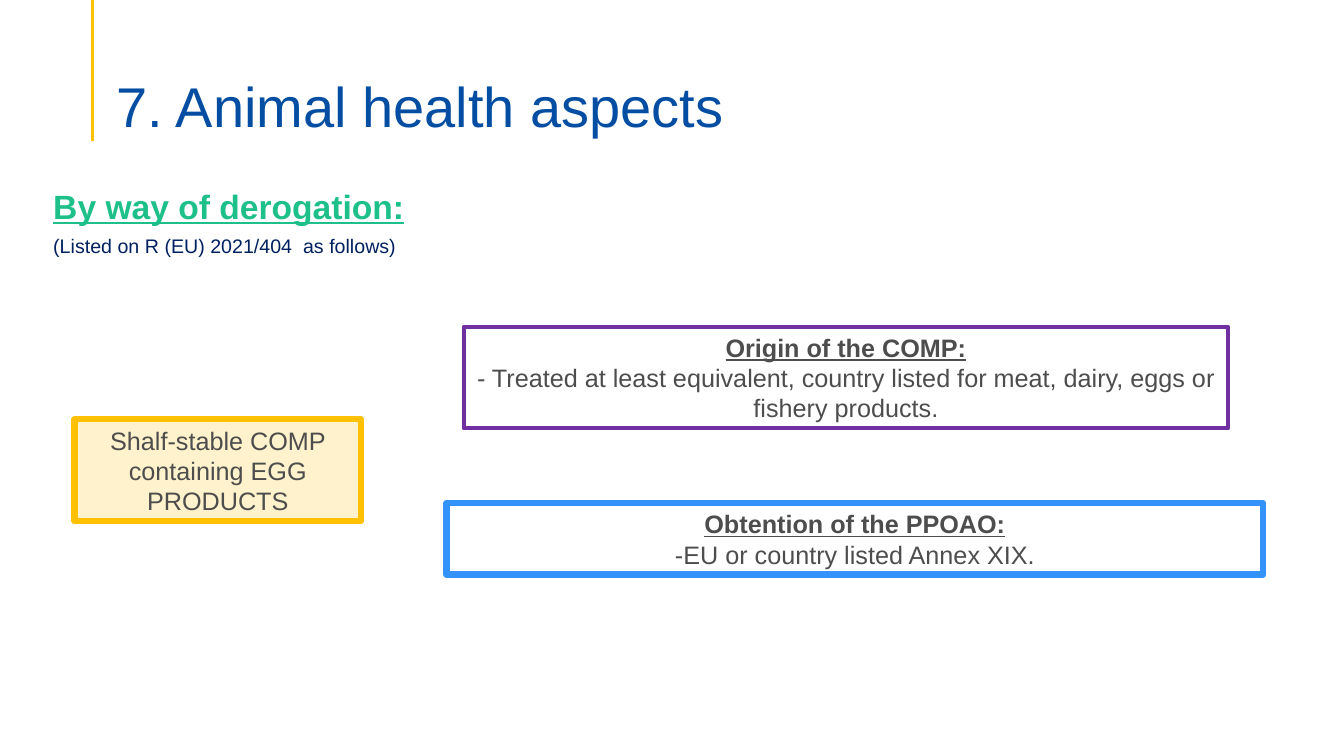
"""Build the slide on animal health aspects and its derogation."""
from lxml import etree
from pptx import Presentation
from pptx.dml.color import RGBColor
from pptx.enum.shapes import MSO_CONNECTOR, MSO_SHAPE
from pptx.enum.text import MSO_ANCHOR, PP_ALIGN
from pptx.oxml.ns import qn
from pptx.util import Inches, Pt

STRAIGHT = MSO_CONNECTOR.STRAIGHT
RECTANGLE = MSO_SHAPE.RECTANGLE
BOTTOM, MIDDLE = MSO_ANCHOR.BOTTOM, MSO_ANCHOR.MIDDLE
LEFT, CENTER = PP_ALIGN.LEFT, PP_ALIGN.CENTER

BLUE = RGBColor(0x03, 0x4E, 0xA2)
GOLD = RGBColor(0xFF, 0xC0, 0x00)
CREAM = RGBColor(0xFF, 0xF2, 0xCC)
PURPLE = RGBColor(0x70, 0x30, 0xA0)
SKY = RGBColor(0x34, 0x92, 0xFB)
GREEN = RGBColor(0x1E, 0xC0, 0x8A)
NAVY = RGBColor(0x00, 0x20, 0x60)
GRAY = RGBColor(0x4D, 0x4D, 0x4D)


def add_text(p, text, size=18, color=GRAY, heading=False, align=LEFT):
    """Write one run into a paragraph; a heading is bold and underlined."""
    p.alignment = align
    r = p.add_run()
    r.text = text
    r.font.name = "Arial"
    r.font.size = Pt(size)
    r.font.color.rgb = color
    r.font.bold = heading
    r.font.underline = heading


prs = Presentation()
prs.slide_width = Inches(13.33)
prs.slide_height = Inches(7.5)
s = prs.slides.add_slide(prs.slide_layouts[6])

rule = s.shapes.add_connector(STRAIGHT, Inches(0.92), 0, Inches(0.92), Inches(1.4))
rule.line.color.rgb = GOLD
rule.line.width = Pt(2.25)
etree.SubElement(rule._element.spPr, qn("a:effectLst"))

title = s.shapes.add_textbox(Inches(1.06), Inches(0.53), Inches(11.5), Inches(0.86))
tf = title.text_frame
tf.word_wrap = True
tf.vertical_anchor = BOTTOM
tf.margin_bottom = 0
tf.paragraphs[0].line_spacing = 0.9
add_text(tf.paragraphs[0], "7. Animal health aspects", size=40, color=BLUE)

boxes = [
    ((0.74, 4.16, 2.84, 1.01), CREAM, GOLD, 4.5, None,
     "Shalf-stable COMP containing EGG PRODUCTS"),
    ((4.6, 3.24, 7.58, 1.01), None, PURPLE, 3, "Origin of the COMP:",
     "- Treated at least equivalent, country listed for meat, dairy, eggs or fishery products."),
    ((4.43, 4.99, 8.1, 0.71), None, SKY, 4.5, "Obtention of the PPOAO:",
     "-EU or country listed Annex XIX."),
]
for place, fill, line, width, heading, body in boxes:
    sp = s.shapes.add_shape(RECTANGLE, *map(Inches, place))
    sp.shadow.inherit = False
    if fill is None:
        sp.fill.background()
    else:
        sp.fill.solid()
        sp.fill.fore_color.rgb = fill
    sp.line.color.rgb = line
    sp.line.width = Pt(width)
    tf = sp.text_frame
    tf.word_wrap = True
    tf.vertical_anchor = MIDDLE
    p = tf.paragraphs[0]
    if heading:
        add_text(p, heading, heading=True, align=CENTER)
        p = tf.add_paragraph()
    add_text(p, body, align=CENTER)

intro = s.shapes.add_textbox(Inches(0.43), Inches(1.79), Inches(4), Inches(0.82))
tf = intro.text_frame
tf.word_wrap = True
add_text(tf.paragraphs[0], "By way of derogation:", size=24, color=GREEN, heading=True)
p = tf.add_paragraph()
p.space_before = Pt(6)
add_text(p, "(Listed on R (EU) 2021/404  as follows)", size=14, color=NAVY)

prs.save("out.pptx")
